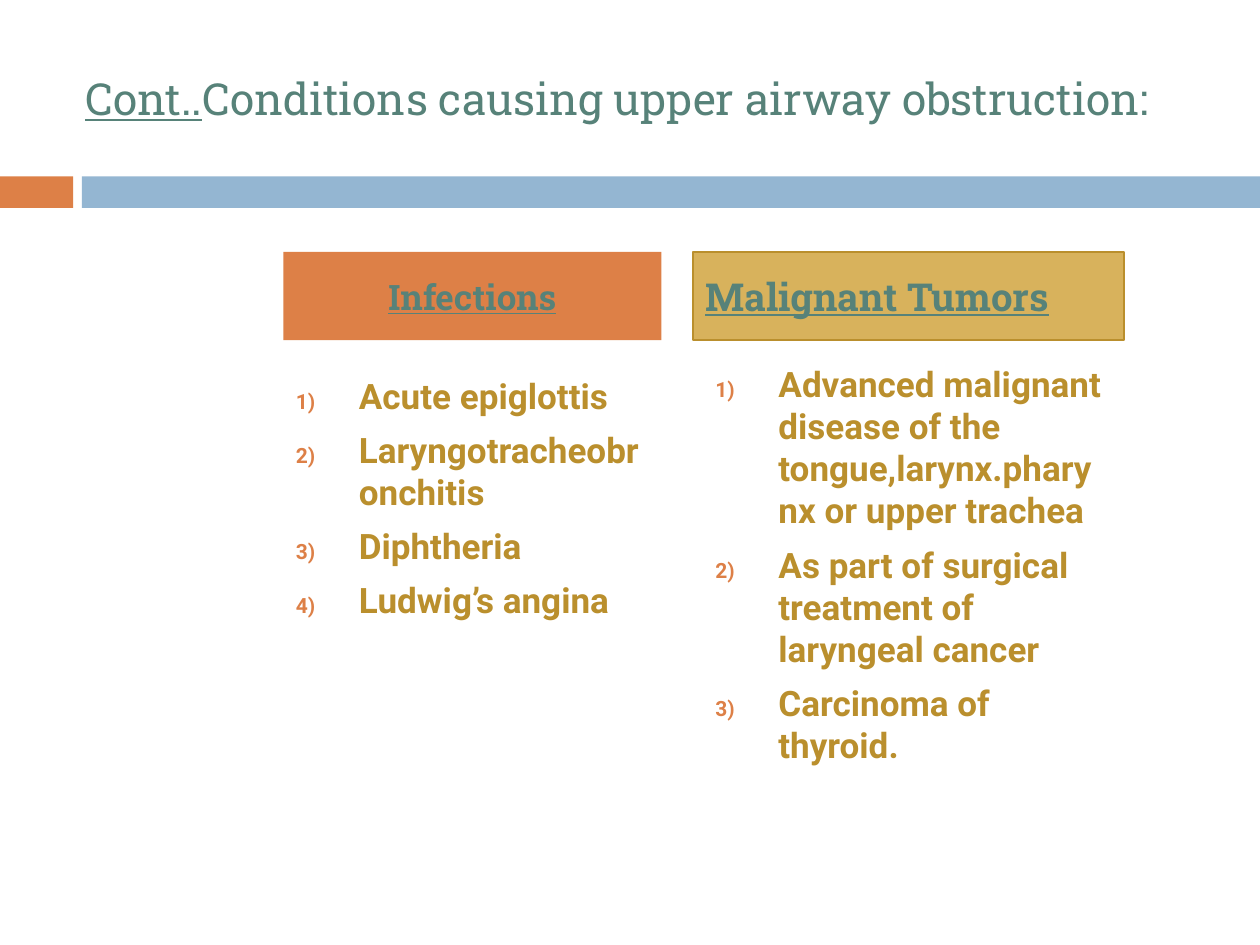
import dataclasses

import pptx
import pptx.dml.color
import pptx.enum.shapes
import pptx.enum.text
import pptx.oxml.ns
import pptx.util
from lxml import etree

Inches = pptx.util.Inches
Pt = pptx.util.Pt
ALIGN = pptx.enum.text.PP_ALIGN
ANCHOR = pptx.enum.text.MSO_ANCHOR


@dataclasses.dataclass(frozen=True)
class Theme:
    """Colours, fonts and type sizes of the slide."""
    teal: str = "578279"
    orange: str = "DD8047"
    blue: str = "94B6D2"
    sand: str = "D8B25C"
    gold: str = "BA8F2D"
    heading_font: str = "Roboto Slab"
    body_font: str = "Roboto"
    title_size: float = 25.2
    infections_size: float = 20
    tumors_size: float = 22
    item_size: float = 20
    space_before: float = 7
    number_scale: int = 60


THEME = Theme()


def rgb(colour):
    """Return a hex string as an RGB colour."""
    return pptx.dml.color.RGBColor.from_string(colour)


def style(font, name, size, colour, bold=False, underline=None):
    """Set the look of a font."""
    font.name = name
    font.size = Pt(size)
    font.color.rgb = rgb(colour)
    font.bold = bold
    font.underline = underline


def add_bar(slide, box, fill, outline=None):
    """Add a flat rectangle in the box."""
    bar = slide.shapes.add_shape(
        pptx.enum.shapes.MSO_SHAPE.RECTANGLE, *map(Inches, box))
    bar.shadow.inherit = False
    bar.fill.solid()
    bar.fill.fore_color.rgb = rgb(fill)
    if outline:
        bar.line.color.rgb = rgb(outline)
        bar.line.width = Pt(0.75)
    else:
        bar.line.fill.background()
    return bar


def add_text_frame(slide, box, anchor):
    """Add a wrapping text box and return its frame."""
    frame = slide.shapes.add_textbox(*map(Inches, box)).text_frame
    frame.word_wrap = True
    frame.vertical_anchor = anchor
    return frame


def number_paragraph(paragraph, indent=0.5):
    """Give a paragraph a hanging automatic number."""
    properties = paragraph._p.get_or_add_pPr()
    properties.set("marL", str(Inches(indent)))
    properties.set("indent", str(-Inches(indent)))
    qn = pptx.oxml.ns.qn
    colour = etree.SubElement(properties, qn("a:buClr"))
    etree.SubElement(colour, qn("a:srgbClr"), val=THEME.orange)
    etree.SubElement(properties, qn("a:buSzPct"), val=str(THEME.number_scale * 1000))
    etree.SubElement(properties, qn("a:buFont"), typeface=THEME.body_font)
    etree.SubElement(properties, qn("a:buAutoNum"), type="arabicParenR")


def add_title(slide, box):
    """Add the title with its underlined lead-in."""
    title = add_text_frame(slide, box, ANCHOR.MIDDLE).paragraphs[0]
    style(title.font, THEME.heading_font, THEME.title_size, THEME.teal)
    lead = title.add_run()
    lead.text = "Cont.."
    lead.font.underline = True
    title.add_run().text = "Conditions causing upper airway obstruction:"


def add_divider(slide, box, accent_width=0.58, gap=0.07):
    """Add the band with a short accent and a long bar."""
    left, top, width, height = box
    offset = accent_width + gap
    add_bar(slide, (left, top, accent_width, height), THEME.orange)
    add_bar(slide, (left + offset, top, width - offset, height), THEME.blue)


def add_heading(slide, box, text, size, align, fill, outline=None):
    """Add a filled column heading."""
    frame = add_bar(slide, box, fill, outline).text_frame
    frame.word_wrap = True
    frame.vertical_anchor = ANCHOR.MIDDLE
    heading = frame.paragraphs[0]
    heading.text = text
    heading.alignment = align
    heading.space_before = Pt(THEME.space_before)
    style(heading.font, THEME.heading_font, size, THEME.teal, True, True)


def add_numbered_list(slide, box, items):
    """Add a numbered list of conditions."""
    frame = add_text_frame(slide, box, ANCHOR.TOP)
    for index, item in enumerate(items):
        entry = frame.add_paragraph() if index else frame.paragraphs[0]
        entry.text = item
        number_paragraph(entry)
        entry.space_before = Pt(THEME.space_before)
        style(entry.font, THEME.body_font, THEME.item_size, THEME.gold, True)


def main():
    """Build the slide and save it."""
    presentation = pptx.Presentation()
    presentation.slide_width = Inches(10)
    presentation.slide_height = Inches(7.5)
    slide = presentation.slides.add_slide(presentation.slide_layouts[6])

    add_divider(slide, (0, 1.4, 10, 0.25))
    add_title(slide, (0.58, 0.3, 8.92, 0.95))
    add_heading(slide, (2.25, 2, 3, 0.7), "Infections",
                THEME.infections_size, ALIGN.CENTER, THEME.orange)
    add_numbered_list(slide, (2.25, 2.92, 3, 3.44), [
        "Acute epiglottis",
        "Laryngotracheobronchitis",
        "Diphtheria",
        "Ludwig’s angina",
    ])
    add_heading(slide, (5.5, 2, 3.42, 0.7), "Malignant Tumors",
                THEME.tumors_size, ALIGN.LEFT, THEME.sand, THEME.gold)
    add_numbered_list(slide, (5.58, 2.83, 3.33, 3.58), [
        "Advanced malignant disease of the tongue,larynx.pharynx or upper trachea",
        "As part of surgical treatment of laryngeal cancer",
        "Carcinoma of thyroid.",
    ])
    presentation.save("out.pptx")


if __name__ == "__main__":
    main()
